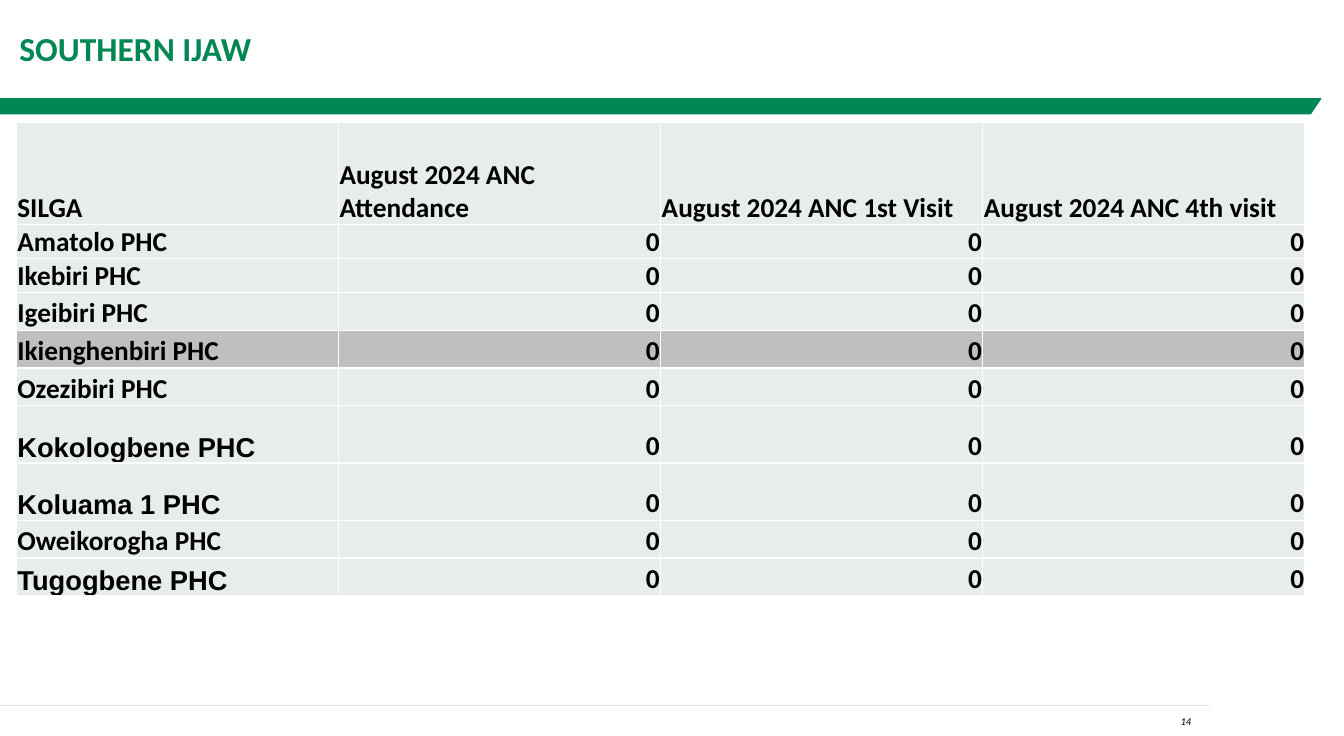
"""Builds the Southern Ijaw antenatal care attendance slide."""
import pptx
import pptx.util
import pptx.dml.color
import pptx.enum.shapes
import pptx.enum.text
import pptx.oxml
import pptx.oxml.ns

RGBColor = pptx.dml.color.RGBColor
MSO_SHAPE = pptx.enum.shapes.MSO_SHAPE
ANCHOR = pptx.enum.text.MSO_ANCHOR
ALIGN = pptx.enum.text.PP_ALIGN

GREEN = RGBColor(0x00, 0x87, 0x53)
WHITE = RGBColor(0xFF, 0xFF, 0xFF)
BLACK = RGBColor(0x00, 0x00, 0x00)
RULE_GREY = RGBColor(0xE5, 0xE5, 0xE5)
CELL_GREEN = RGBColor(0xE7, 0xED, 0xE9)
CELL_GREY = RGBColor(0xBF, 0xBF, 0xBF)

TITLE = "SOUTHERN IJAW"
PAGE_NUMBER = "14"
HEADERS = ["SILGA", "August 2024 ANC Attendance", "August 2024 ANC 1st Visit", "August 2024 ANC 4th visit"]
HEADER_HEIGHT = 100
FACILITIES = [
    ("Amatolo PHC", "Calibri", 33, CELL_GREEN),
    ("Ikebiri PHC", "Calibri", 33, CELL_GREEN),
    ("Igeibiri PHC", "Calibri", 37, CELL_GREEN),
    ("Ikienghenbiri PHC", "Calibri", 37, CELL_GREY),
    ("Ozezibiri PHC", "Calibri", 37, CELL_GREEN),
    ("Kokologbene PHC", "Arial", 56, CELL_GREEN),
    ("Koluama 1 PHC", "Arial", 56, CELL_GREEN),
    ("Oweikorogha PHC", "Calibri", 37, CELL_GREEN),
    ("Tugogbene PHC", "Arial", 37, CELL_GREEN),
]
VISITS = ["0", "0", "0"]
TABLE_LEFT, TABLE_TOP, COLUMN_WIDTH = 16, 120, 315


def px(n):
    return pptx.util.Emu(n * 9525)


def style(p, size, color, font="Calibri", bold=False, italic=False):
    for r in p.runs:
        f = r.font
        f.size, f.name, f.bold, f.italic = pptx.util.Pt(size), font, bold, italic
        f.color.rgb = color


def add_block(s, kind, box, color):
    sp = s.shapes.add_shape(kind, *map(px, box))
    sp.shadow.inherit = False
    sp.fill.solid()
    sp.fill.fore_color.rgb = color
    sp.line.fill.background()


def add_text(s, box, text, anchor):
    tf = s.shapes.add_textbox(*map(px, box)).text_frame
    tf.word_wrap = True
    tf.vertical_anchor = anchor
    tf.text = text
    return tf


def add_borders(cell):
    tcPr = cell._tc.get_or_add_tcPr()
    for i, side in enumerate(("lnL", "lnR", "lnT", "lnB")):
        tcPr.insert(i, pptx.oxml.parse_xml(
            f'<a:{side} {pptx.oxml.ns.nsdecls("a")} w="12700"><a:solidFill>'
            f'<a:srgbClr val="{WHITE}"/></a:solidFill></a:{side}>'))


def fill_cell(cell, text, font, color, align):
    cell.fill.solid()
    cell.fill.fore_color.rgb = color
    cell.margin_left = cell.margin_right = cell.margin_top = px(1)
    cell.margin_bottom = 0
    cell.vertical_anchor = ANCHOR.BOTTOM
    p = cell.text_frame.paragraphs[0]
    p.text = text
    p.alignment = align
    style(p, 20, BLACK, font, bold=True)
    add_borders(cell)


def add_attendance_table(s):
    rows = [(HEADERS, "Calibri", HEADER_HEIGHT, CELL_GREEN)]
    rows += [([name] + VISITS, font, height, color) for name, font, height, color in FACILITIES]
    table = s.shapes.add_table(
        len(rows), len(HEADERS), px(TABLE_LEFT), px(TABLE_TOP),
        px(COLUMN_WIDTH * len(HEADERS)), px(sum(row[2] for row in rows))).table
    table.first_row = table.horz_banding = False
    for column in table.columns:
        column.width = px(COLUMN_WIDTH)
    for i, (texts, font, height, color) in enumerate(rows):
        table.rows[i].height = px(height)
        for j, text in enumerate(texts):
            is_value = i > 0 and j > 0
            fill_cell(table.cell(i, j), text, "Calibri" if is_value else font, color,
                      ALIGN.RIGHT if is_value else ALIGN.LEFT)


def main():
    prs = pptx.Presentation()
    prs.slide_width, prs.slide_height = px(1314), px(720)
    s = prs.slides.add_slide(prs.slide_layouts[6])

    add_block(s, MSO_SHAPE.RECTANGLE, (0, 96, 1292, 16), GREEN)
    add_block(s, MSO_SHAPE.ISOSCELES_TRIANGLE, (1279, 96, 27, 20), WHITE)

    rule = s.shapes.add_connector(
        pptx.enum.shapes.MSO_CONNECTOR.STRAIGHT, px(0), px(690), px(1183), px(690))
    rule.line.color.rgb = RULE_GREY
    rule.line.width = pptx.util.Pt(1)
    rule._element.spPr.append(pptx.oxml.parse_xml(f'<a:effectLst {pptx.oxml.ns.nsdecls("a")}/>'))

    tf = add_text(s, (0, 0, 1314, 95), TITLE, ANCHOR.MIDDLE)
    tf.margin_left = px(19)
    style(tf.paragraphs[0], 24.6, GREEN, bold=True)

    tf = add_text(s, (1051, 695, 123, 23), PAGE_NUMBER, ANCHOR.TOP)
    tf.paragraphs[0].alignment = ALIGN.RIGHT
    style(tf.paragraphs[0], 7.7, BLACK, italic=True)

    add_attendance_table(s)
    prs.save("out.pptx")


if __name__ == "__main__":
    main()
